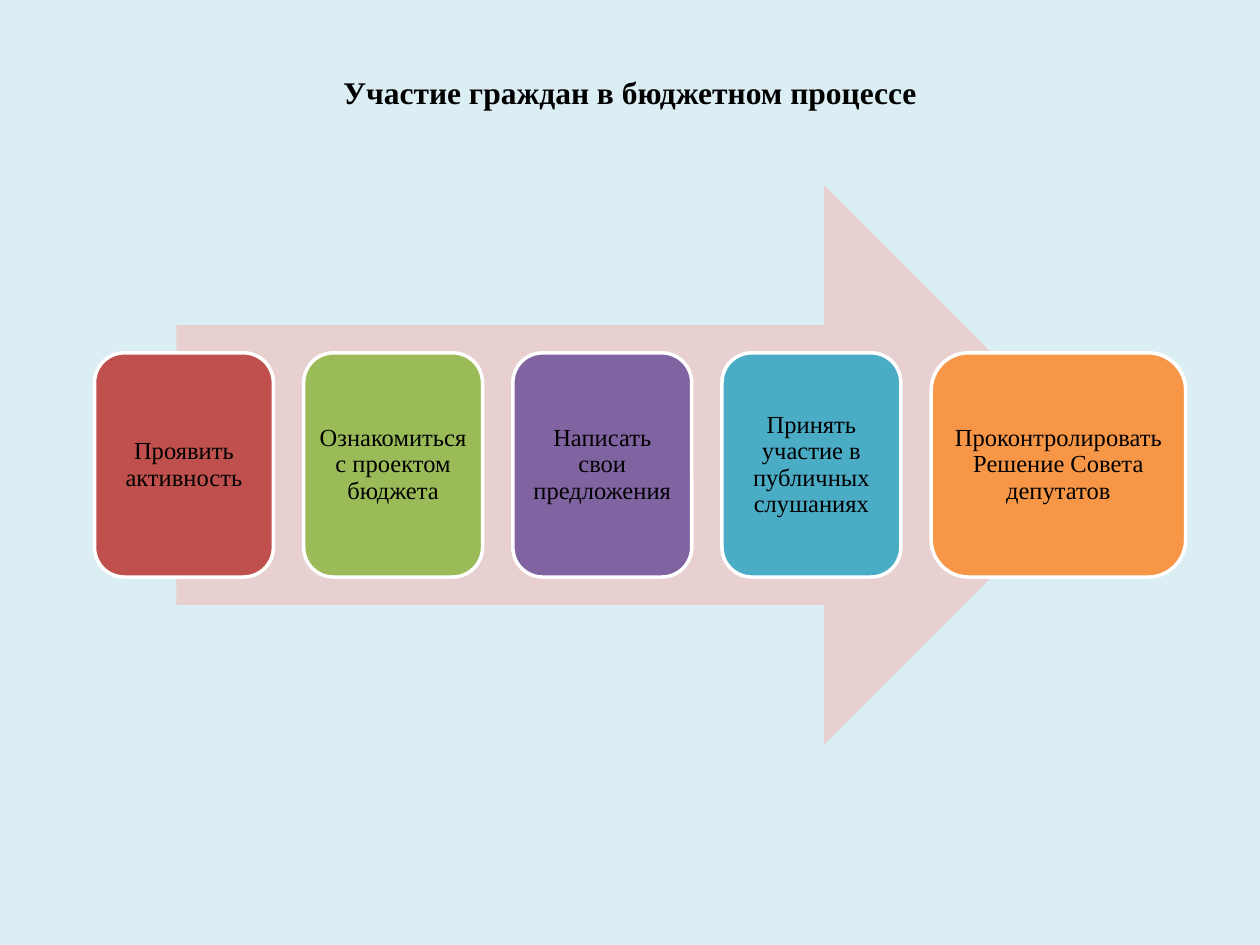
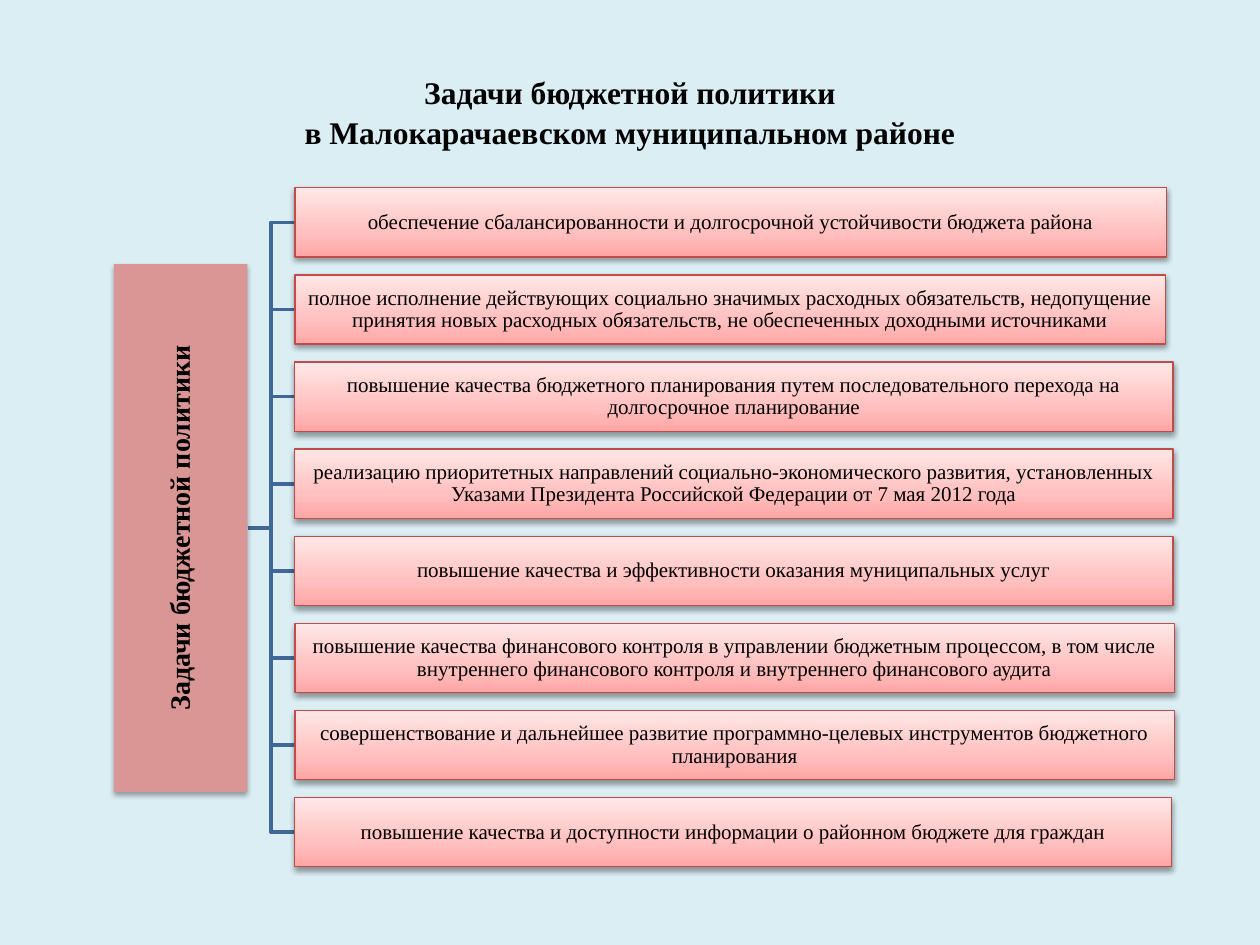
import copy
from dataclasses import dataclass
from typing import Optional

import pptx
import pptx.util
import pptx.dml.color
import pptx.enum.shapes
import pptx.enum.text
import pptx.oxml
import pptx.oxml.ns
import pptx.presentation
import pptx.shapes.autoshape
import pptx.slide
import pptx.text.text
from pptx.dml.color import RGBColor
from pptx.util import Inches

FONT = "Times New Roman"
BLACK = RGBColor(0x00, 0x00, 0x00)
WHITE = RGBColor(0xFF, 0xFF, 0xFF)
BACKGROUND = RGBColor(0xDB, 0xEE, 0xF4)
ARROW = RGBColor(0xE8, 0xD0, 0xD0)
RED = RGBColor(0xC0, 0x50, 0x4D)
GREEN = RGBColor(0x9B, 0xBB, 0x59)
PURPLE = RGBColor(0x80, 0x64, 0xA2)
TEAL = RGBColor(0x4B, 0xAC, 0xC6)
ORANGE = RGBColor(0xF7, 0x96, 0x46)
ROSE = RGBColor(0xD9, 0x96, 0x94)
BRACKET = RGBColor(0x3F, 0x67, 0x97)
TASK_BORDER = RGBColor(0xBF, 0x4C, 0x48)
TASK_GRADIENT = (
    (0.0, RGBColor(0xFF, 0xA6, 0xA5)),
    (0.35, RGBColor(0xFF, 0xC0, 0xBF)),
    (1.0, RGBColor(0xFF, 0xE7, 0xE7)),
)
SHAPE = pptx.enum.shapes.MSO_SHAPE
ANCHOR = pptx.enum.text.MSO_ANCHOR


@dataclass(frozen=True)
class Box:
    left: float
    top: float
    width: float
    height: float


@dataclass(frozen=True)
class Step:
    text: str
    color: RGBColor
    width: float = 1.42


@dataclass(frozen=True)
class Task:
    text: str
    width: float


STEPS = (
    Step("Проявить активность", RED),
    Step("Ознакомиться с проектом бюджета", GREEN),
    Step("Написать свои предложения", PURPLE),
    Step("Принять участие в публичных слушаниях", TEAL),
    Step("Проконтролировать Решение Совета депутатов", ORANGE, 2.02),
)
STEP_LEFT, STEP_TOP, STEP_HEIGHT, STEP_GAP = 0.75, 2.8, 1.78, 0.24

TASKS = (
    Task("обеспечение сбалансированности и долгосрочной устойчивости бюджета района", 6.92),
    Task("полное исполнение действующих социально значимых расходных обязательств, "
         "недопущение принятия новых расходных обязательств, не обеспеченных "
         "доходными источниками", 6.91),
    Task("повышение качества бюджетного планирования путем последовательного "
         "перехода на долгосрочное планирование", 6.97),
    Task("реализацию приоритетных направлений социально-экономического развития, "
         "установленных Указами Президента Российской Федерации от 7 мая 2012 года", 6.97),
    Task("повышение качества и эффективности оказания муниципальных услуг", 6.97),
    Task("повышение качества финансового контроля в управлении бюджетным процессом, "
         "в том числе внутреннего финансового контроля и внутреннего финансового аудита", 6.98),
    Task("совершенствование и дальнейшее развитие программно-целевых инструментов "
         "бюджетного планирования", 6.98),
    Task("повышение качества и доступности информации о районном бюджете для граждан", 6.96),
)
TASK_LEFT, TASK_HEIGHT = 2.34, 0.55
FIRST_TASK_TOP, LAST_TASK_TOP = 1.49, 6.33
POLICY = Box(-0.66, 3.66, 4.19, 1.06)


def write_text(frame: pptx.text.text.TextFrame, *lines: str, size: float,
               bold: bool = False, anchor: ANCHOR = ANCHOR.MIDDLE,
               inset: float = 0.01, line_spacing: float = 0.9,
               space_before: float = 0) -> None:
    frame.word_wrap = True
    frame.auto_size = pptx.enum.text.MSO_AUTO_SIZE.NONE
    frame.vertical_anchor = anchor
    frame.margin_left = frame.margin_right = Inches(inset)
    frame.margin_top = frame.margin_bottom = Inches(inset)
    for index, line in enumerate(lines):
        paragraph = frame.add_paragraph() if index else frame.paragraphs[0]
        paragraph.alignment = pptx.enum.text.PP_ALIGN.CENTER
        paragraph.line_spacing = line_spacing
        paragraph.space_before = pptx.util.Pt(space_before)
        run = paragraph.add_run()
        run.text = line
        run.font.name = FONT
        run.font.size = pptx.util.Pt(size)
        run.font.bold = bold
        run.font.color.rgb = BLACK


def add_titled_slide(deck: pptx.presentation.Presentation,
                     *title_lines: str) -> pptx.slide.Slide:
    slide = deck.slides.add_slide(deck.slide_layouts[5])
    title = slide.shapes.title
    title.left, title.top = Inches(0.5), Inches(0.53)
    title.width, title.height = Inches(9), Inches(0.8)
    write_text(title.text_frame, *title_lines, size=18, bold=True,
               anchor=ANCHOR.TOP, inset=0.05, line_spacing=1.0, space_before=1)
    return slide


def add_box(slide: pptx.slide.Slide, kind: SHAPE, box: Box,
            fill: Optional[RGBColor] = None, line: Optional[RGBColor] = None,
            line_width: float = 2) -> pptx.shapes.autoshape.Shape:
    shape = slide.shapes.add_shape(kind, Inches(box.left), Inches(box.top),
                                   Inches(box.width), Inches(box.height))
    shape.shadow.inherit = False
    if fill is not None:
        shape.fill.solid()
        shape.fill.fore_color.rgb = fill
    if line is None:
        shape.line.fill.background()
    else:
        shape.line.color.rgb = line
        shape.line.width = pptx.util.Pt(line_width)
    return shape


def fill_task_gradient(shape: pptx.shapes.autoshape.Shape) -> None:
    shape.fill.gradient()
    shape.fill.gradient_angle = 90
    stop_list = shape._element.spPr.find(".//" + pptx.oxml.ns.qn("a:gsLst"))
    stop_list.append(copy.deepcopy(stop_list[0]))
    for stop, (position, color) in zip(shape.fill.gradient_stops, TASK_GRADIENT):
        stop.position = position
        stop.color.rgb = color


def drop_shadow(shape: pptx.shapes.autoshape.Shape, opacity: int, distance: float) -> None:
    effects = shape._element.spPr.find(pptx.oxml.ns.qn("a:effectLst"))
    effects.append(pptx.oxml.parse_xml(
        f'<a:outerShdw {pptx.oxml.ns.nsdecls("a")} blurRad="{pptx.util.Pt(3.1)}" '
        f'dist="{pptx.util.Pt(distance)}" dir="5400000" rotWithShape="0">'
        f'<a:srgbClr val="{BLACK}"><a:alpha val="{opacity * 1000}"/></a:srgbClr>'
        "</a:outerShdw>"))


def add_bracket(slide: pptx.slide.Slide, end_y: float) -> None:
    """Draw the elbow from the policy bar to the middle of a task's left side."""
    start_x = POLICY.left + (POLICY.width + POLICY.height) / 2
    start_y = POLICY.top + POLICY.height / 2
    spine_x = (start_x + TASK_LEFT) / 2
    builder = slide.shapes.build_freeform(Inches(start_x), Inches(start_y))
    corners = ((spine_x, start_y), (spine_x, end_y), (TASK_LEFT, end_y))
    builder.add_line_segments([(Inches(x), Inches(y)) for x, y in corners], close=False)
    bracket = builder.convert_to_shape()
    bracket.shadow.inherit = False
    bracket.fill.background()
    bracket.line.color.rgb = BRACKET
    bracket.line.width = pptx.util.Pt(2)


def build_participation(deck: pptx.presentation.Presentation) -> None:
    slide = add_titled_slide(deck, "Участие граждан в бюджетном процессе")
    add_box(slide, SHAPE.RIGHT_ARROW, Box(1.4, 1.47, 7.36, 4.44), ARROW)
    left = STEP_LEFT
    for step in STEPS:
        card = add_box(slide, SHAPE.ROUNDED_RECTANGLE,
                       Box(left, STEP_TOP, step.width, STEP_HEIGHT), step.color, WHITE)
        write_text(card.text_frame, step.text, size=14, inset=0.05)
        left += step.width + STEP_GAP


def build_policy_tasks(deck: pptx.presentation.Presentation) -> None:
    slide = add_titled_slide(deck, "Задачи бюджетной политики",
                             "в Малокарачаевском муниципальном районе")
    pitch = (LAST_TASK_TOP - FIRST_TASK_TOP) / (len(TASKS) - 1)
    tops = [FIRST_TASK_TOP + pitch * row for row in range(len(TASKS))]
    for top in reversed(tops):
        add_bracket(slide, top + TASK_HEIGHT / 2)

    policy = add_box(slide, SHAPE.RECTANGLE, POLICY, ROSE)
    policy.rotation = 270
    drop_shadow(policy, 35, 1.8)
    write_text(policy.text_frame, "Задачи бюджетной политики", size=16, bold=True)

    for task, top in zip(TASKS, tops):
        bar = add_box(slide, SHAPE.RECTANGLE, Box(TASK_LEFT, top, task.width, TASK_HEIGHT),
                      line=TASK_BORDER, line_width=0.75)
        fill_task_gradient(bar)
        drop_shadow(bar, 38, 1.6)
        write_text(bar.text_frame, task.text, size=12)


def main() -> None:
    deck = pptx.Presentation()
    deck.slide_width, deck.slide_height = Inches(10), Inches(7.5)
    backdrop = deck.slide_master.background.fill
    backdrop.solid()
    backdrop.fore_color.rgb = BACKGROUND
    build_participation(deck)
    build_policy_tasks(deck)
    deck.save("out.pptx")


if __name__ == "__main__":
    main()
